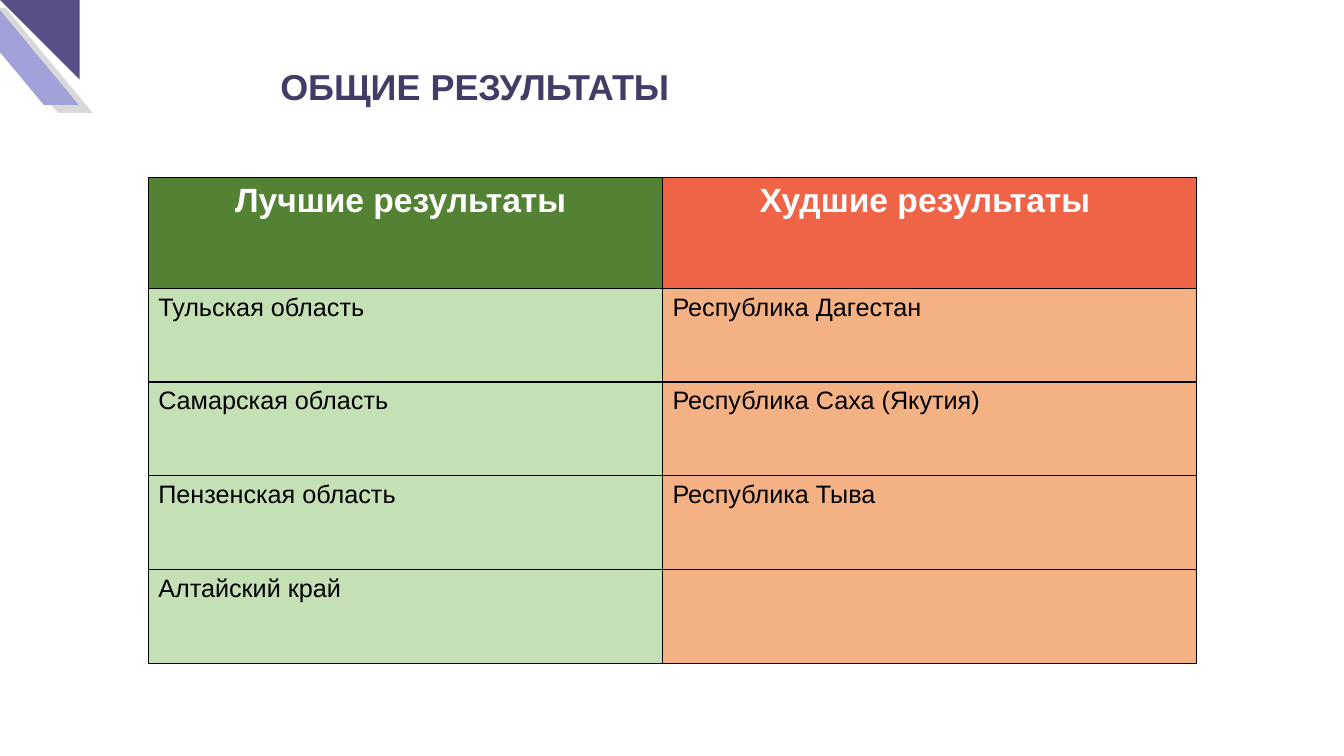
from lxml import etree
from pptx import Presentation
from pptx.dml.color import RGBColor
from pptx.enum.shapes import MSO_SHAPE as Shape
from pptx.enum.text import MSO_ANCHOR as Anchor, PP_ALIGN as Align
from pptx.oxml.ns import qn
from pptx.util import Inches, Pt

WHITE = RGBColor(0xFF, 0xFF, 0xFF)
BLACK = RGBColor(0x00, 0x00, 0x00)
SHADE = RGBColor(0xD9, 0xD9, 0xD9)
LILAC = RGBColor(0xA2, 0xA2, 0xDA)
VIOLET = RGBColor(0x56, 0x50, 0x87)
TITLE_COLOR = RGBColor(0x42, 0x3D, 0x67)
HEADER_FILLS = [RGBColor(0x54, 0x82, 0x35), RGBColor(0xEF, 0x63, 0x47)]
BODY_FILLS = [RGBColor(0xC5, 0xE0, 0xB4), RGBColor(0xF4, 0xB1, 0x83)]

HEADER_FONT = {"name": "Arial", "size": Pt(24), "bold": True}
BODY_FONT = {"name": "Arial", "size": Pt(18), "bold": False}
TITLE_FONT = {"name": "Arial", "size": Pt(25.7), "bold": True}

RESULTS = [
    ("Лучшие результаты ", "Худшие результаты "),
    ("Тульская область", "Республика Дагестан"),
    ("Самарская область", "Республика Саха (Якутия)"),
    ("Пензенская область", "Республика Тыва"),
    ("Алтайский край", ""),
]


def set_font(font, values, color):
    for name, value in values.items():
        setattr(font, name, value)
    font.color.rgb = color


def add_borders(cell):
    properties = cell._tc.get_or_add_tcPr()
    for side in ("a:lnL", "a:lnR", "a:lnT", "a:lnB"):
        line = etree.SubElement(properties, qn(side), w=str(Pt(1)))
        fill = etree.SubElement(line, qn("a:solidFill"))
        etree.SubElement(fill, qn("a:srgbClr"), val=str(BLACK))


deck = Presentation()
deck.slide_width = Inches(13.33)
deck.slide_height = Inches(7.5)
page = deck.slides.add_slide(deck.slide_layouts[5])

# Corner decoration
for left, top, color in [(-0.29, 0.08, SHADE), (-0.43, 0, LILAC)]:
    stripe = page.shapes.add_shape(
        Shape.PARALLELOGRAM, Inches(left), Inches(top), Inches(1.21), Inches(1.04))
    stripe.adjustments[0] = 0.83
    stripe._element.spPr.xfrm.set("flipH", "1")
    stripe.shadow.inherit = False
    stripe.fill.solid()
    stripe.fill.fore_color.rgb = color
    stripe.line.fill.background()

corner = page.shapes.add_shape(
    Shape.RIGHT_TRIANGLE, 0, 0, Inches(0.79), Inches(0.79))
corner.rotation = 180
corner.shadow.inherit = False
corner.fill.solid()
corner.fill.fore_color.rgb = VIOLET
corner.line.fill.background()

# Title
title = page.shapes.title
title.left, title.top = Inches(2.58), Inches(0.59)
title.width, title.height = Inches(7.84), Inches(0.53)
title.text_frame.text = "ОБЩИЕ РЕЗУЛЬТАТЫ"
title.text_frame.vertical_anchor = Anchor.MIDDLE
title.text_frame.margin_left = Inches(0.2)
title_para = title.text_frame.paragraphs[0]
title_para.alignment = Align.LEFT
set_font(title_para.runs[0].font, TITLE_FONT, TITLE_COLOR)

# Results table
table = page.shapes.add_table(
    len(RESULTS), 2, Inches(1.47), Inches(1.76), Inches(10.4), Inches(4.82)).table
for column, width in zip(table.columns, (5.1, 5.3)):
    column.width = Inches(width)

for row_index, texts in enumerate(RESULTS):
    is_header = row_index == 0
    table.rows[row_index].height = Inches(1.1 if is_header else 0.93)
    fills = HEADER_FILLS if is_header else BODY_FILLS
    for column_index, text in enumerate(texts):
        cell = table.cell(row_index, column_index)
        add_borders(cell)
        cell.fill.solid()
        cell.fill.fore_color.rgb = fills[column_index]
        cell.text = text
        para = cell.text_frame.paragraphs[0]
        para.alignment = Align.CENTER if is_header else Align.LEFT
        for span in para.runs:
            if is_header:
                set_font(span.font, HEADER_FONT, WHITE)
            else:
                set_font(span.font, BODY_FONT, BLACK)

deck.save("out.pptx")
